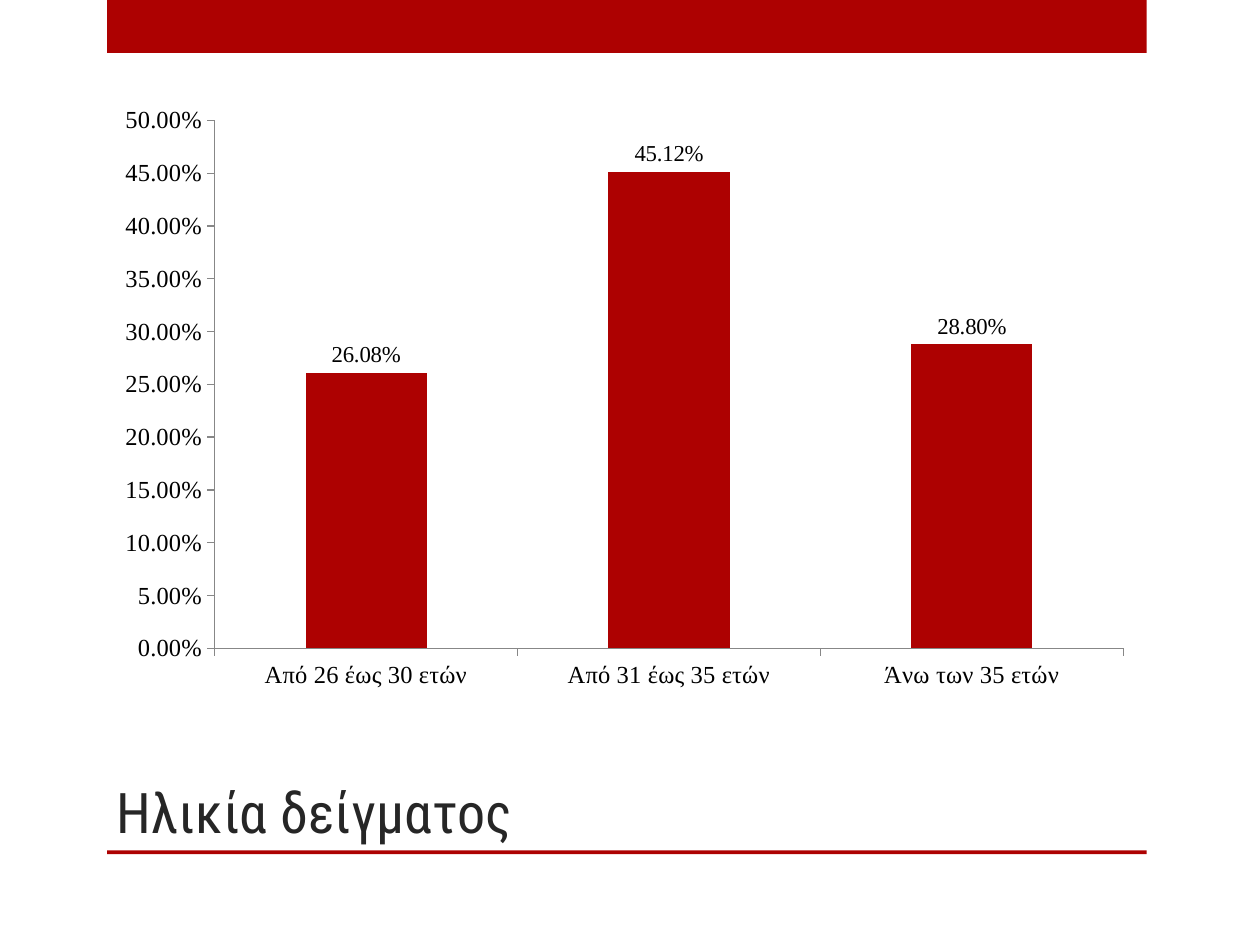
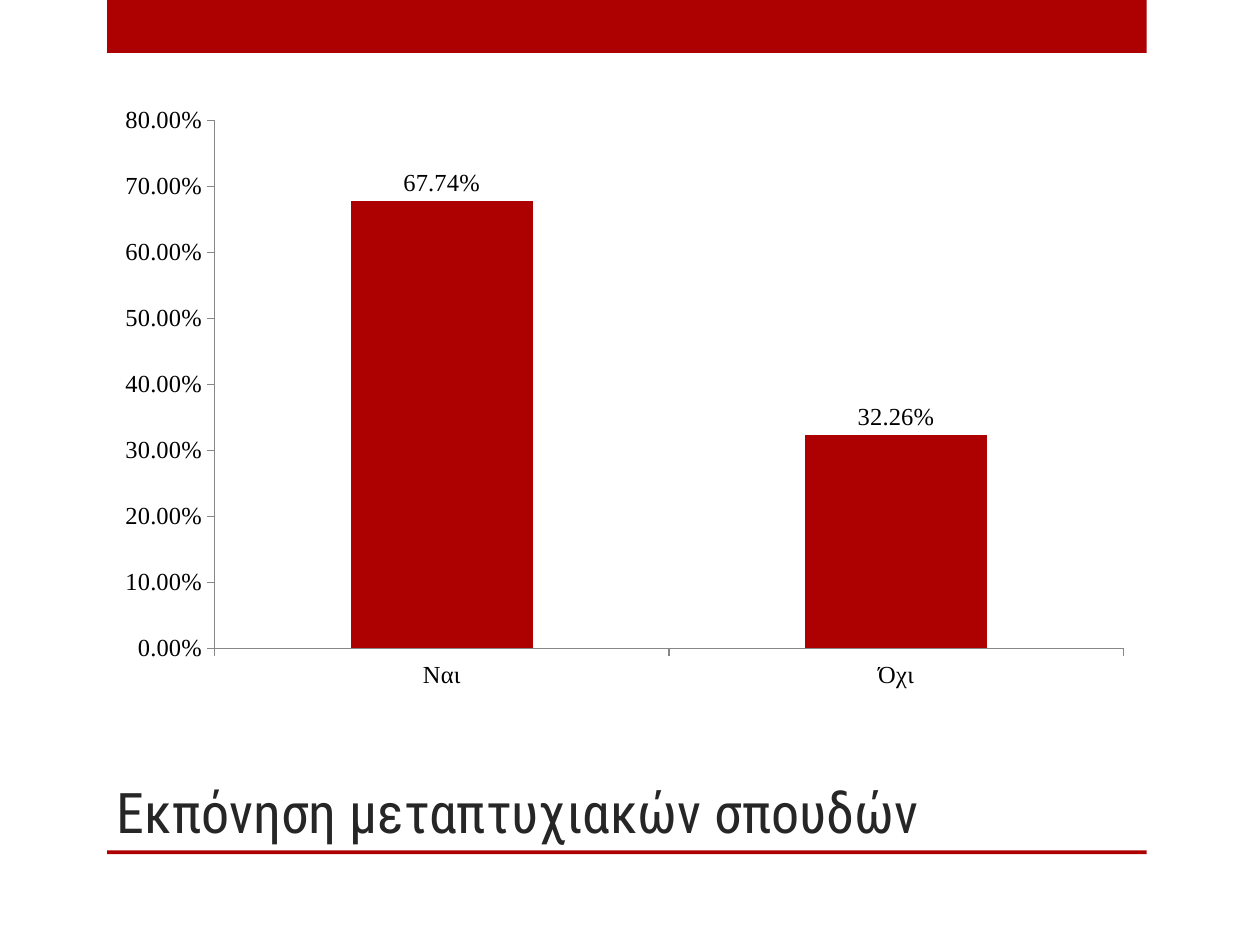
from dataclasses import dataclass

from pptx import Presentation
from pptx.chart.axis import _BaseAxis
from pptx.chart.data import CategoryChartData
from pptx.dml.color import RGBColor
from pptx.enum.chart import XL_CHART_TYPE, XL_LABEL_POSITION, XL_TICK_MARK
from pptx.enum.shapes import MSO_SHAPE
from pptx.enum.text import MSO_ANCHOR
from pptx.slide import Slide
from pptx.util import Inches, Pt

COLUMN_CLUSTERED = XL_CHART_TYPE.COLUMN_CLUSTERED
OUTSIDE_END = XL_LABEL_POSITION.OUTSIDE_END
TICK_OUTSIDE = XL_TICK_MARK.OUTSIDE
TICK_NONE = XL_TICK_MARK.NONE
RECTANGLE = MSO_SHAPE.RECTANGLE
ANCHOR_BOTTOM = MSO_ANCHOR.BOTTOM

SLIDE_WIDTH = Inches(10)
SLIDE_HEIGHT = Inches(7.5)
GRID_UNITS = 100
BLANK_LAYOUT = 6


@dataclass(frozen=True)
class Theme:
    """Colours, fonts and type sizes of the presentation."""

    accent: RGBColor = RGBColor.from_string("AD0101")
    title_color: RGBColor = RGBColor.from_string("262626")
    chart_color: RGBColor = RGBColor.from_string("000000")
    axis_color: RGBColor = RGBColor.from_string("878787")
    title_font: str = "Roboto Condensed"
    chart_font: str = "Times New Roman"
    title_size: Pt = Pt(32)
    chart_size: Pt = Pt(18)
    axis_size: Pt = Pt(14)
    axis_width: Pt = Pt(0.75)
    percent_format: str = "0.00%"


@dataclass(frozen=True)
class Area:
    """A box on a grid of one hundred columns by one hundred rows."""

    column: float
    row: float
    columns: float
    rows: float

    def box(self) -> tuple[int, int, int, int]:
        """Return left, top, width and height as lengths."""
        return (
            round(self.column * SLIDE_WIDTH / GRID_UNITS),
            round(self.row * SLIDE_HEIGHT / GRID_UNITS),
            round(self.columns * SLIDE_WIDTH / GRID_UNITS),
            round(self.rows * SLIDE_HEIGHT / GRID_UNITS),
        )


@dataclass(frozen=True)
class Survey:
    """One survey question with its answers and value scale."""

    title: str
    shares: dict[str, float]
    scale_top: float
    scale_step: float
    label_size: Pt


THEME = Theme()
BANDS = (Area(8.5, 0, 82.5, 5.6), Area(8.5, 90, 82.5, 0.4))
TITLE_AREA = Area(8.3, 75.2, 74.2, 14.8)
CHART_AREA = Area(8.3, 10, 82.5, 64.13)

SURVEYS = (
    Survey(
        "Ηλικία δείγματος",
        {
            "Από 26 έως 30 ετών": 0.2608,
            "Από 31 έως 35 ετών": 0.4512,
            "Άνω των 35 ετών": 0.288,
        },
        scale_top=0.5,
        scale_step=0.05,
        label_size=Pt(13),
    ),
    Survey(
        "Εκπόνηση μεταπτυχιακών σπουδών",
        {"Ναι": 0.6774, "Όχι": 0.3226},
        scale_top=0.8,
        scale_step=0.1,
        label_size=Pt(14),
    ),
)


def add_band(slide: Slide, area: Area) -> None:
    """Draw a plain accent rectangle."""
    shape = slide.shapes.add_shape(RECTANGLE, *area.box())
    shape.shadow.inherit = False
    shape.fill.solid()
    shape.fill.fore_color.rgb = THEME.accent
    shape.line.fill.background()


def add_title(slide: Slide, text: str) -> None:
    """Write the title above the lower band."""
    frame = slide.shapes.add_textbox(*TITLE_AREA.box()).text_frame
    frame.word_wrap = True
    frame.vertical_anchor = ANCHOR_BOTTOM
    paragraph = frame.paragraphs[0]
    paragraph.text = text
    paragraph.font.name = THEME.title_font
    paragraph.font.size = THEME.title_size
    paragraph.font.color.rgb = THEME.title_color


def style_axis(axis: _BaseAxis) -> None:
    """Give an axis its line, ticks and type size."""
    axis.has_major_gridlines = False
    axis.major_tick_mark = TICK_OUTSIDE
    axis.minor_tick_mark = TICK_NONE
    axis.tick_labels.font.size = THEME.axis_size
    axis.format.line.color.rgb = THEME.axis_color
    axis.format.line.width = THEME.axis_width


def add_survey_chart(slide: Slide, survey: Survey) -> None:
    """Draw the answers as a column chart with percentage labels."""
    data = CategoryChartData(number_format=THEME.percent_format)
    data.categories = survey.shares.keys()
    data.add_series("Series 1", survey.shares.values())
    chart = slide.shapes.add_chart(
        COLUMN_CLUSTERED, *CHART_AREA.box(), data
    ).chart
    chart.has_legend = False
    chart.has_title = False
    chart.font.name = THEME.chart_font
    chart.font.size = THEME.chart_size
    chart.font.color.rgb = THEME.chart_color

    for axis in (chart.category_axis, chart.value_axis):
        style_axis(axis)
    value_axis = chart.value_axis
    value_axis.minimum_scale = 0
    value_axis.maximum_scale = survey.scale_top
    value_axis.major_unit = survey.scale_step
    value_axis.tick_labels.number_format = THEME.percent_format
    value_axis.tick_labels.number_format_is_linked = False

    plot = chart.plots[0]
    plot.vary_by_categories = False
    plot.gap_width = 150
    series = plot.series[0]
    series.format.fill.solid()
    series.format.fill.fore_color.rgb = THEME.accent
    labels = series.data_labels
    labels.show_value = True
    labels.position = OUTSIDE_END
    labels.number_format = THEME.percent_format
    labels.number_format_is_linked = False
    labels.font.name = THEME.chart_font
    labels.font.size = survey.label_size
    labels.font.color.rgb = THEME.chart_color


def main() -> None:
    """Build one slide per survey question and save the presentation."""
    presentation = Presentation()
    presentation.slide_width = SLIDE_WIDTH
    presentation.slide_height = SLIDE_HEIGHT
    for survey in SURVEYS:
        slide = presentation.slides.add_slide(
            presentation.slide_layouts[BLANK_LAYOUT]
        )
        for band in BANDS:
            add_band(slide, band)
        add_title(slide, survey.title)
        add_survey_chart(slide, survey)
    presentation.save("out.pptx")


if __name__ == "__main__":
    main()
